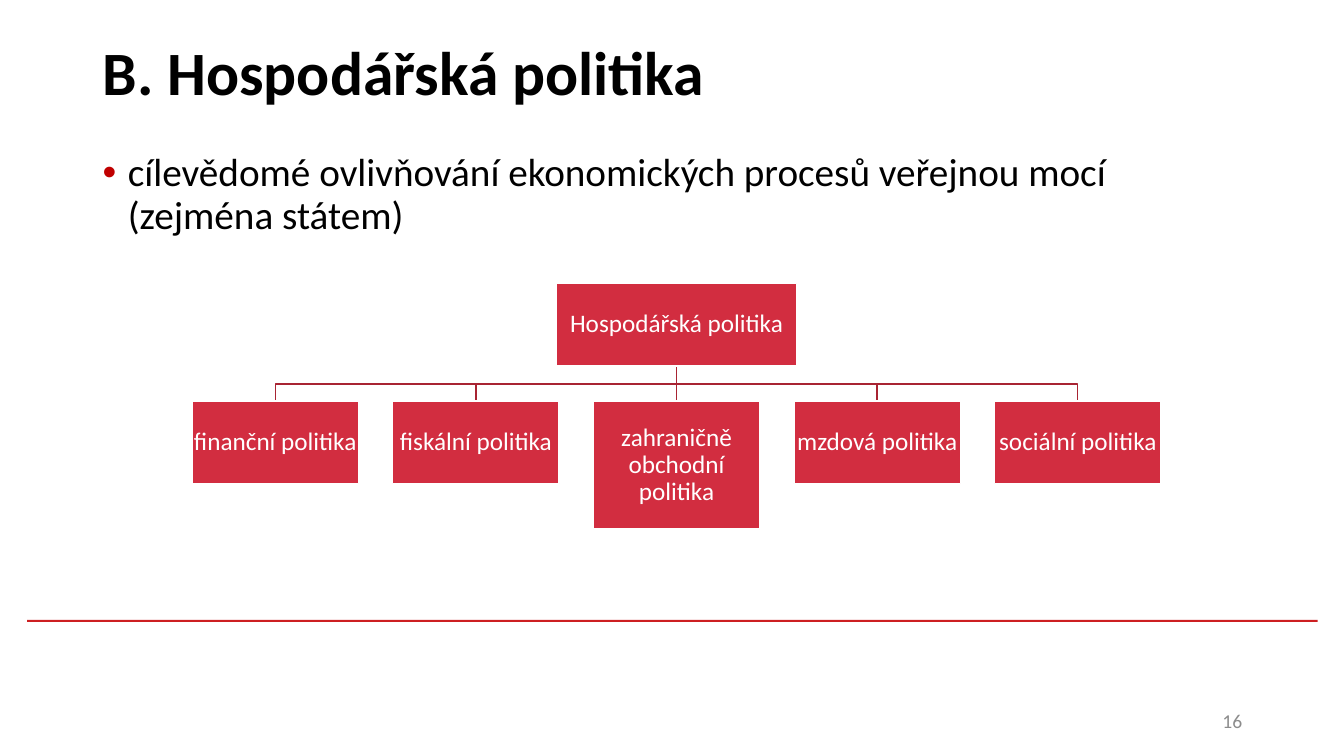
from lxml import etree
from pptx import Presentation
from pptx.dml.color import RGBColor
from pptx.enum.shapes import MSO_SHAPE
from pptx.enum.text import MSO_ANCHOR, PP_ALIGN
from pptx.oxml.ns import qn
from pptx.util import Inches, Pt

RECTANGLE = MSO_SHAPE.RECTANGLE
TOP, MIDDLE = MSO_ANCHOR.TOP, MSO_ANCHOR.MIDDLE
LEFT, CENTER, RIGHT = PP_ALIGN.LEFT, PP_ALIGN.CENTER, PP_ALIGN.RIGHT

COLORS = {
    "black": "000000",
    "white": "FFFFFF",
    "gray": "8C8C8C",
    "rule": "CD1F21",
    "bullet": "C00000",
    "node": "D22D40",
    "branch": "A82433",
}

POLICIES = [
    ("finanční politika", 0.82),
    ("fiskální politika", 0.82),
    ("zahraničně obchodní politika", 1.27),
    ("mzdová politika", 0.82),
    ("sociální politika", 0.82),
]
CENTER_X = 6.71
ROOT_TOP, ROOT_WIDTH, ROOT_HEIGHT = 2.81, 2.38, 0.82
CHILD_TOP, CHILD_WIDTH, CHILD_PITCH = 3.98, 1.65, 1.99
BRANCH_TOP, BRANCH_MIDDLE = 3.64, 3.81


class SlideBuilder:
    def __init__(self, slide, font_name):
        self.slide = slide
        self.font_name = font_name

    def color(self, name):
        return RGBColor.from_string(COLORS[name])

    def fill_text(self, shape, text, size, color, align=LEFT, anchor=MIDDLE,
                  bold=False, spacing=0.9):
        frame = shape.text_frame
        frame.word_wrap = True
        frame.vertical_anchor = anchor
        para = frame.paragraphs[0]
        para.text = text
        para.alignment = align
        para.line_spacing = spacing
        font = para.font
        font.name = self.font_name
        font.size = Pt(size)
        font.bold = bold
        font.color.rgb = self.color(color)

    def text(self, left, top, width, height, text, size, color, bullet=None, **style):
        box = self.slide.shapes.add_textbox(
            Inches(left), Inches(top), Inches(width), Inches(height))
        if bullet:
            self.add_bullet(box.text_frame.paragraphs[0], bullet)
        self.fill_text(box, text, size, color, **style)

    def add_bullet(self, para, color):
        properties = para._p.get_or_add_pPr()
        properties.set("marL", str(Inches(0.25)))
        properties.set("indent", str(Inches(-0.25)))
        bullet_color = etree.SubElement(properties, qn("a:buClr"))
        etree.SubElement(bullet_color, qn("a:srgbClr"), val=COLORS[color])
        etree.SubElement(properties, qn("a:buFont"), typeface="Arial")
        etree.SubElement(properties, qn("a:buChar"), char="•")

    def rectangle(self, left, top, width, height, fill, line=None):
        box = self.slide.shapes.add_shape(
            RECTANGLE, Inches(left), Inches(top), Inches(width), Inches(height))
        box.shadow.inherit = False
        box.fill.solid()
        box.fill.fore_color.rgb = self.color(fill)
        if line:
            box.line.color.rgb = self.color(line)
            box.line.width = Pt(1)
        else:
            box.line.fill.background()
        return box

    def node(self, center, top, width, height, text):
        box = self.rectangle(center - width / 2, top, width, height, "node", "white")
        frame = box.text_frame
        frame.margin_left = frame.margin_right = Inches(0.01)
        frame.margin_top = frame.margin_bottom = Inches(0.01)
        self.fill_text(box, text, 18, "white", align=CENTER)

    def branch(self, center):
        """Draw the elbow line from the root node to a child node."""
        points = [(CENTER_X, BRANCH_MIDDLE), (center, BRANCH_MIDDLE), (center, CHILD_TOP)]
        builder = self.slide.shapes.build_freeform(Inches(CENTER_X), Inches(BRANCH_TOP))
        builder.add_line_segments([(Inches(x), Inches(y)) for x, y in points], close=False)
        line = builder.convert_to_shape()
        line.shadow.inherit = False
        line.fill.background()
        line.line.color.rgb = self.color("branch")
        line.line.width = Pt(1)


def main():
    deck = Presentation()
    deck.slide_width, deck.slide_height = Inches(13.33), Inches(7.5)
    page = SlideBuilder(deck.slides.add_slide(deck.slide_layouts[6]), "Calibri")

    page.rectangle(0.27, 6.15, 12.8, 0.02, "rule")
    page.text(0.92, 0.02, 11.5, 1.45, "B. Hospodářská politika", 44, "black", bold=True)
    page.text(0.92, 1.47, 11.5, 4.57,
              "cílevědomé ovlivňování ekonomických procesů veřejnou mocí (zejména státem)",
              28, "black", bullet="bullet", anchor=TOP)
    page.text(9.42, 6.95, 3, 0.4, "16", 14, "gray", align=RIGHT, spacing=1.0)

    middle = len(POLICIES) // 2
    centers = [CENTER_X + (index - middle) * CHILD_PITCH for index in range(len(POLICIES))]
    for center in centers:
        page.branch(center)
    page.node(CENTER_X, ROOT_TOP, ROOT_WIDTH, ROOT_HEIGHT, "Hospodářská politika")
    for center, (policy, height) in zip(centers, POLICIES):
        page.node(center, CHILD_TOP, CHILD_WIDTH, height, policy)

    deck.save("out.pptx")


if __name__ == "__main__":
    main()
